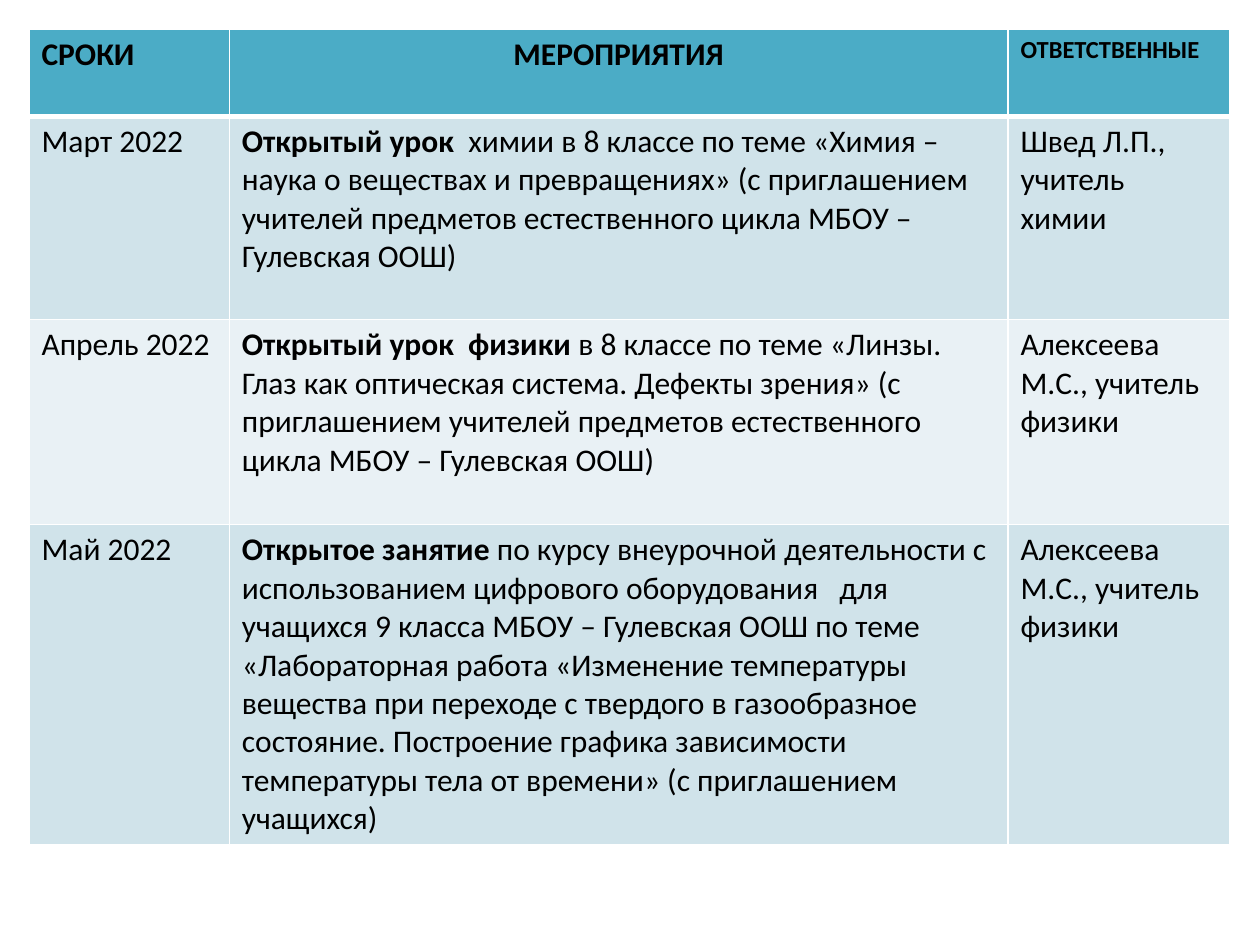
from dataclasses import dataclass

from lxml.etree import SubElement
from pptx import Presentation
from pptx.dml.color import RGBColor
from pptx.enum.text import PP_ALIGN as Align
from pptx.oxml.ns import qn
from pptx.table import _Cell as Cell
from pptx.util import Inches, Pt

WIDTH, HEIGHT = Inches(10), Inches(7.5)

# Table grid as shares of the slide's size
LEFT, TOP = 0.023, 0.031
COLUMNS = (0.159, 0.618, 0.176)
ROWS = (0.092, 0.215, 0.217, 0.337)

FONT = "Calibri"
INK, RULE, HEADER = "000000", "FFFFFF", "4BACC6"
BANDS = ("D0E3EA", "E9F1F5")


@dataclass(frozen=True)
class Run:
    text: str
    bold: bool = False
    size: int = 18


@dataclass(frozen=True)
class Entry:
    runs: tuple[Run, ...]
    align: Align = Align.LEFT


@dataclass(frozen=True)
class Event:
    date: str
    title: str
    details: str
    teacher: str

    def entries(self) -> tuple[Entry, ...]:
        return (
            Entry((Run(self.date),)),
            Entry((Run(self.title, bold=True), Run(self.details))),
            Entry((Run(self.teacher),)),
        )


HEADINGS = (
    Entry((Run("СРОКИ", bold=True),)),
    Entry((Run("МЕРОПРИЯТИЯ", bold=True),), Align.CENTER),
    Entry((Run("ОТВЕТСТВЕННЫЕ", bold=True, size=14),)),
)
PHYSICS_TEACHER = "Алексеева М.С., учитель физики"
EVENTS = (
    Event(
        "Март 2022",
        "Открытый урок  ",
        "химии в 8 классе по теме «Химия – наука о веществах и превращениях» "
        "(с приглашением учителей предметов естественного цикла "
        "МБОУ – Гулевская ООШ)",
        "Швед Л.П., учитель химии",
    ),
    Event(
        "Апрель 2022",
        "Открытый урок  физики",
        " в 8 классе по теме «Линзы. Глаз как оптическая система. Дефекты "
        "зрения» (с приглашением учителей предметов естественного цикла "
        "МБОУ – Гулевская ООШ)",
        PHYSICS_TEACHER,
    ),
    Event(
        "Май 2022",
        "Открытое занятие",
        " по курсу внеурочной деятельности с использованием цифрового "
        "оборудования   для учащихся 9 класса МБОУ – Гулевская ООШ по теме "
        "«Лабораторная работа «Изменение температуры вещества при переходе "
        "с твердого в газообразное состояние. Построение графика зависимости "
        "температуры тела от времени» (с приглашением учащихся)",
        PHYSICS_TEACHER,
    ),
)


def color(value: str) -> RGBColor:
    return RGBColor.from_string(value)


def draw_borders(cell: Cell, top: int, bottom: int) -> None:
    properties = cell._tc.get_or_add_tcPr()
    for side, points in (("L", 1), ("R", 1), ("T", top), ("B", bottom)):
        line = SubElement(properties, qn(f"a:ln{side}"), w=str(Pt(points)))
        SubElement(SubElement(line, qn("a:solidFill")), qn("a:srgbClr"), val=RULE)


def draw_cell(cell: Cell, entry: Entry, row: int) -> None:
    # Borders come before the fill in the cell's properties
    draw_borders(cell, top=3 if row == 1 else 1, bottom=3 if row == 0 else 1)
    cell.fill.solid()
    cell.fill.fore_color.rgb = color(BANDS[(row - 1) % 2] if row else HEADER)

    paragraph = cell.text_frame.paragraphs[0]
    paragraph.alignment = entry.align
    for part in entry.runs:
        run = paragraph.add_run()
        run.text = part.text
        run.font.name = FONT
        run.font.size = Pt(part.size)
        run.font.bold = part.bold
        run.font.color.rgb = color(INK)


def main() -> None:
    deck = Presentation()
    deck.slide_width, deck.slide_height = WIDTH, HEIGHT
    slide = deck.slides.add_slide(deck.slide_layouts[6])

    # Schedule grid
    schedule = slide.shapes.add_table(
        len(ROWS), len(COLUMNS),
        int(LEFT * WIDTH), int(TOP * HEIGHT),
        int(sum(COLUMNS) * WIDTH), int(sum(ROWS) * HEIGHT),
    ).table
    for column, share in zip(schedule.columns, COLUMNS):
        column.width = int(share * WIDTH)
    for row, share in zip(schedule.rows, ROWS):
        row.height = int(share * HEIGHT)

    # Headings, then one row per event
    content = (HEADINGS, *(event.entries() for event in EVENTS))
    for row_index, entries in enumerate(content):
        for column_index, entry in enumerate(entries):
            draw_cell(schedule.cell(row_index, column_index), entry, row_index)

    deck.save("out.pptx")


if __name__ == "__main__":
    main()
